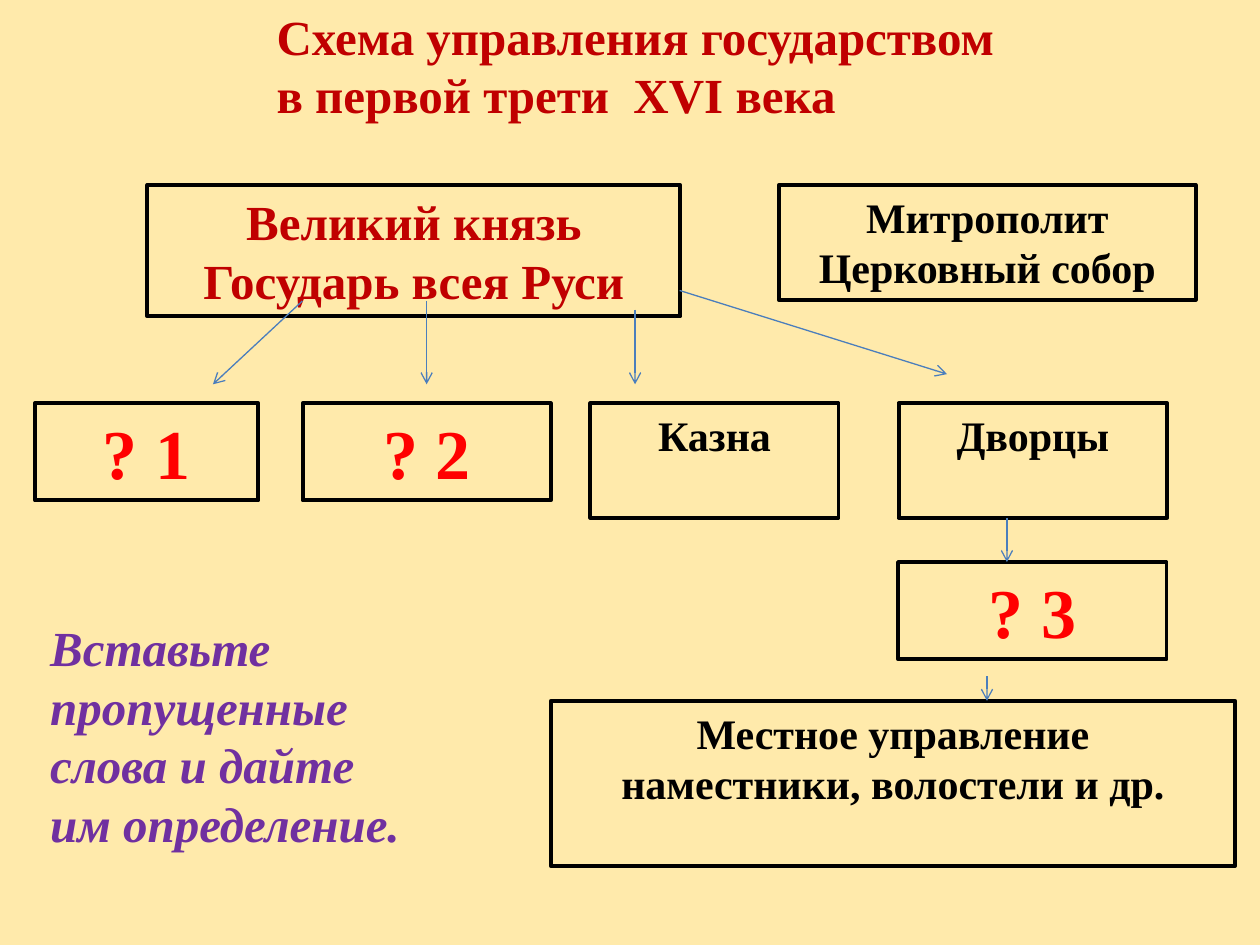
"""Builds a slide with the scheme of state government in the early XVI century."""
from lxml import etree
from pptx import Presentation
from pptx import util as u
from pptx.dml import color
from pptx.enum import shapes, text
from pptx.oxml import ns

COLORS = {
    "background": "FFEAAB", "dark_red": "C00000", "red": "FF0000",
    "black": "000000", "purple": "7030A0", "arrow": "4B7EBC",
}
FORMATS = {
    "ruler": {"size": u.Pt(28), "color": "dark_red"},
    "office": {"size": u.Pt(24), "color": "black"},
    "question": {"size": u.Pt(40), "color": "red"},
    "task": {"size": u.Pt(28), "color": "purple", "italic": True},
}


def rgb(name):
    return color.RGBColor.from_string(COLORS[name])


def write(shape, lines, style, alignment):
    frame = shape.text_frame
    frame.text = "\n".join(lines)
    layout = {
        "word_wrap": True,
        "auto_size": text.MSO_AUTO_SIZE.NONE,
        "vertical_anchor": text.MSO_ANCHOR.TOP,
    }
    for name, value in layout.items():
        setattr(frame, name, value)
    values = {"name": "Times New Roman", "bold": True, **FORMATS[style]}
    tint = values.pop("color")
    for paragraph in frame.paragraphs:
        paragraph.alignment = alignment
        for run in paragraph.runs:
            for name, value in values.items():
                setattr(run.font, name, value)
            run.font.color.rgb = rgb(tint)


presentation = Presentation()
presentation.slide_width, presentation.slide_height = u.Pt(720), u.Pt(540)
slide = presentation.slides.add_slide(presentation.slide_layouts[6])
slide.background.fill.solid()
slide.background.fill.fore_color.rgb = rgb("background")

title = slide.shapes.add_textbox(u.Pt(20), u.Pt(0), u.Pt(686), u.Pt(75))
title.text_frame.margin_left = u.Pt(138)
write(title, ["Схема управления государством", "в первой трети  XVI века"],
      "ruler", text.PP_ALIGN.LEFT)

TOP_ROW, OFFICE_ROW = 105.8, 230.4
boxes = [
    (84.2, TOP_ROW, 304.6, 75, "ruler", ["Великий князь", "Государь всея Руси"]),
    (445, TOP_ROW, 238.3, 65.5, "office", ["Митрополит", "Церковный собор"]),
    (20, OFFICE_ROW, 127.6, 55.6, "question", ["? 1"]),
    (173, OFFICE_ROW, 141.8, 55.6, "question", ["? 2"]),
    (337.4, OFFICE_ROW, 141.8, 65.5, "office", ["Казна"]),
    (513.5, OFFICE_ROW, 153.4, 65.5, "office", ["Дворцы"]),
    (513.2, 321.2, 153.4, 55.6, "question", ["? 3"]),
    (314.8, 400.5, 391, 94.4, "office",
     ["Местное управление", "наместники, волостели и др."]),
]
for left, top, width, height, style, lines in boxes:
    box = slide.shapes.add_shape(
        shapes.MSO_SHAPE.RECTANGLE, *map(u.Pt, (left, top, width, height)))
    box.shadow.inherit = False
    box.fill.background()
    box.line.color.rgb = rgb("black")
    box.line.width = u.Pt(2.25)
    write(box, lines, style, text.PP_ALIGN.CENTER)

arrows = [
    (172.8, 172, 121.7, 219.6),
    (243.8, 172, 243.8, 219.6),
    (362.9, 177, 362.9, 219.6),
    (388.4, 166, 541.2, 213.8),
    (575.4, 296, 575.4, 321.2),
    (564, 386.5, 564, 400.5),
]
for ends in arrows:
    arrow = slide.shapes.add_connector(
        shapes.MSO_CONNECTOR.STRAIGHT, *map(u.Pt, ends))
    arrow.line.color.rgb = rgb("arrow")
    arrow.line.width = u.Pt(0.75)
    properties = arrow.line._get_or_add_ln()
    etree.SubElement(properties, ns.qn("a:tailEnd"), type="arrow")
    etree.SubElement(properties.getparent(), ns.qn("a:effectLst"))

task = slide.shapes.add_textbox(u.Pt(21.6), u.Pt(349.2), u.Pt(216.7), u.Pt(143.3))
write(task, ["Вставьте пропущенные слова и дайте им определение."],
      "task", text.PP_ALIGN.LEFT)

presentation.save("out.pptx")
